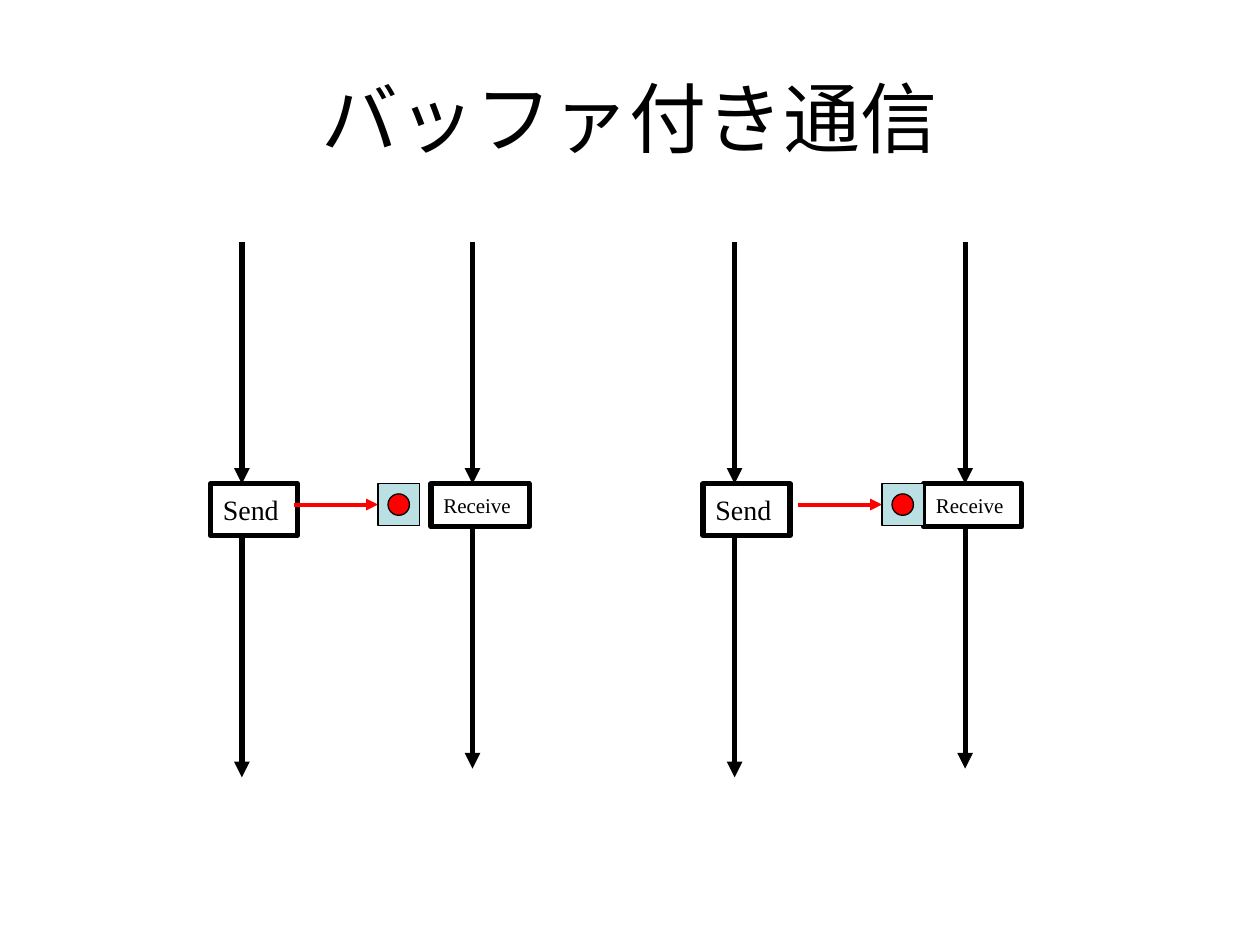
from dataclasses import dataclass

from lxml.etree import SubElement
from pptx import Presentation
from pptx.dml.color import RGBColor
from pptx.enum.shapes import MSO_CONNECTOR, MSO_SHAPE
from pptx.enum.text import MSO_ANCHOR, PP_ALIGN
from pptx.oxml.ns import qn
from pptx.util import Inches, Pt


@dataclass(frozen=True)
class Theme:
    ink: RGBColor = RGBColor(0, 0, 0)
    message: RGBColor = RGBColor(0xFF, 0, 0)
    buffer: RGBColor = RGBColor(0xBB, 0xE0, 0xE3)
    title_font: str = "Arial"
    label_font: str = "Times New Roman"
    title_size: float = 44
    send_size: float = 16
    receive_size: float = 12
    process_line: float = 3
    message_line: float = 2.25
    thin_line: float = 0.75


THEME = Theme()
SEND = {"label": "Send", "size": THEME.send_size,
        "indent": 0.25, "width": 0.69, "height": 0.41}
RECEIVE = {"label": "Receive", "size": THEME.receive_size,
           "indent": 0.33, "width": 0.78, "height": 0.34}
LANE_LENGTH = 1.92
BUFFER_SIDE = 0.33
TOKEN_SIDE = 0.17


def add_arrow(slide, start, end, color, width):
    arrow = slide.shapes.add_connector(
        MSO_CONNECTOR.STRAIGHT, *(Inches(value) for value in (*start, *end)))
    arrow.line.color.rgb = color
    arrow.line.width = Pt(width)
    SubElement(arrow.line._get_or_add_ln(), qn("a:tailEnd"), type="triangle")
    SubElement(arrow._element.spPr, qn("a:effectLst"))


def add_outlined(slide, preset, box, line_width, fill=None):
    shape = slide.shapes.add_shape(preset, *(Inches(value) for value in box))
    shape.shadow.inherit = False
    shape.line.color.rgb = THEME.ink
    shape.line.width = Pt(line_width)
    if fill is None:
        shape.fill.background()
    else:
        shape.fill.solid()
        shape.fill.fore_color.rgb = fill
    return shape


def write_text(shape, text, align, wrap, font_name, size):
    frame = shape.text_frame
    frame.word_wrap = wrap
    frame.vertical_anchor = MSO_ANCHOR.MIDDLE
    paragraph = frame.paragraphs[0]
    paragraph.alignment = align
    run = paragraph.add_run()
    run.text = text
    for name, value in {"name": font_name, "size": Pt(size)}.items():
        setattr(run.font, name, value)
    run.font.color.rgb = THEME.ink


def add_title(slide, box, text):
    title = slide.shapes.add_textbox(*(Inches(value) for value in box))
    write_text(title, text, PP_ALIGN.CENTER, True,
               THEME.title_font, THEME.title_size)


def add_process(slide, x, top, step):
    """Draw a process timeline at x, interrupted by its step box."""
    step_top = top + LANE_LENGTH
    step_bottom = step_top + step["height"]
    for start in (top, step_bottom):
        add_arrow(slide, (x, start), (x, start + LANE_LENGTH),
                  THEME.ink, THEME.process_line)
    box = (x - step["indent"], step_top, step["width"], step["height"])
    step_box = add_outlined(slide, MSO_SHAPE.RECTANGLE, box, THEME.process_line)
    write_text(step_box, step["label"], PP_ALIGN.LEFT, False,
               THEME.label_font, step["size"])


def add_buffered_message(slide, left, top):
    """Draw the message arrow, the buffer it reaches and the token inside."""
    buffer_left = left + 0.67
    middle = top + BUFFER_SIDE / 2
    add_arrow(slide, (left, middle), (buffer_left, middle),
              THEME.message, THEME.message_line)
    add_outlined(slide, MSO_SHAPE.RECTANGLE,
                 (buffer_left, top, BUFFER_SIDE, BUFFER_SIDE),
                 THEME.thin_line, THEME.buffer)
    inset = (BUFFER_SIDE - TOKEN_SIDE) / 2
    add_outlined(slide, MSO_SHAPE.OVAL,
                 (buffer_left + inset, top + inset, TOKEN_SIDE, TOKEN_SIDE),
                 THEME.thin_line, THEME.message)


def add_exchange(slide, left, top, message_offset):
    """Draw a sender and a receiver joined by a buffered message."""
    add_process(slide, left + SEND["indent"], top, SEND)
    add_process(slide, left + 2.08, top, RECEIVE)
    add_buffered_message(slide, left + message_offset, top + LANE_LENGTH)


def main():
    presentation = Presentation()
    presentation.slide_width = Inches(10)
    presentation.slide_height = Inches(7.5)
    slide = presentation.slides.add_slide(presentation.slide_layouts[6])
    add_title(slide, (0.5, 0.3, 9, 1.25), "バッファ付き通信")
    for left, message_offset in ((1.67, 0.66), (5.58, 0.75)):
        add_exchange(slide, left, 1.92, message_offset)
    presentation.save("out.pptx")


if __name__ == "__main__":
    main()
